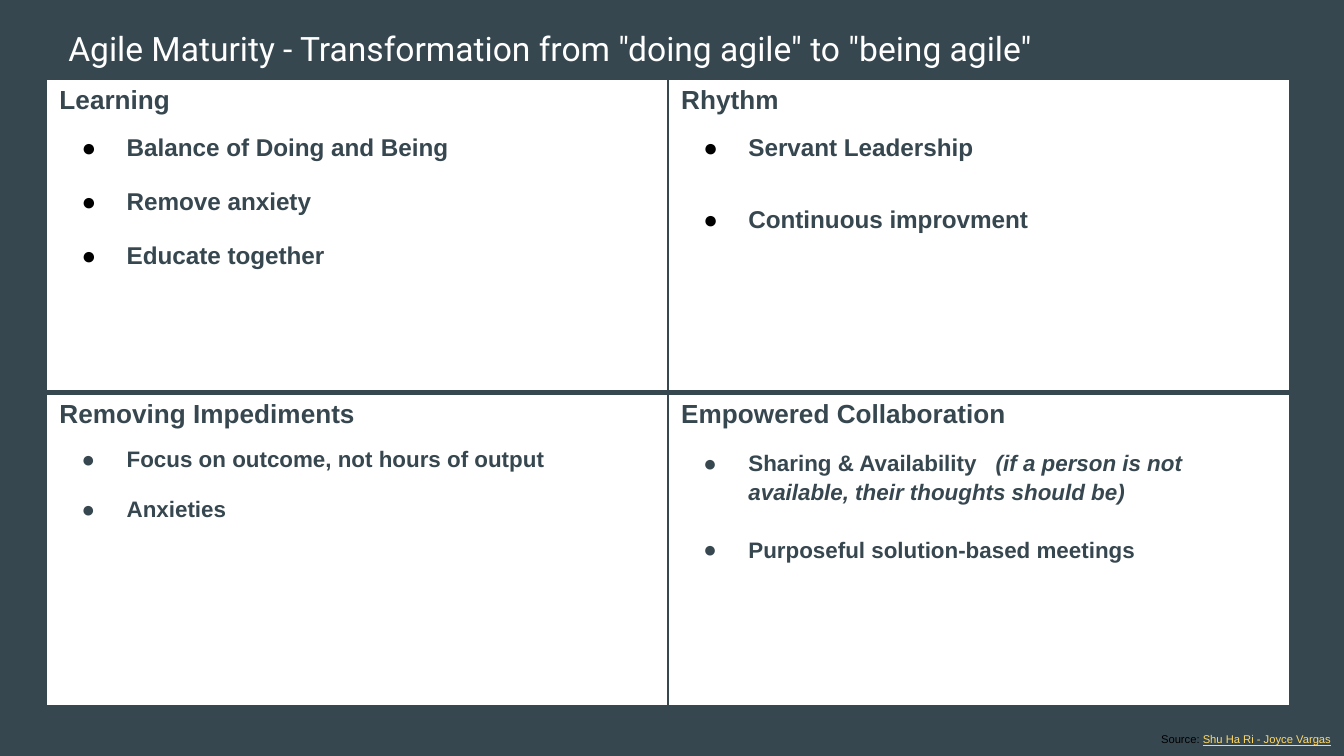
import pptx
import pptx.util
import pptx.dml.color
import pptx.enum.text
import pptx.oxml
from pptx.util import Cm, Pt

SLATE, WHITE, BLACK, GOLD = "37474F", "FFFFFF", "000000", "FFD966"
NS = 'xmlns:a="http://schemas.openxmlformats.org/drawingml/2006/main"'
ALIGN = pptx.enum.text.PP_ALIGN


def paint(item, color):
    """Give a fill or a font a solid colour."""
    if hasattr(item, "solid"):
        item.solid()
        item.fore_color.rgb = pptx.dml.color.RGBColor.from_string(color)
    else:
        item.color.rgb = pptx.dml.color.RGBColor.from_string(color)


def style(par, size, color, face="Arial", bold=False):
    """Set the font of a whole paragraph."""
    par.font.name, par.font.size, par.font.bold = face, Pt(size), bold
    paint(par.font, color)


deck = pptx.Presentation()
deck.slide_width, deck.slide_height = Cm(25.4), Cm(14.29)
slide = deck.slides.add_slide(deck.slide_layouts[5])
paint(slide.background.fill, SLATE)

# Title
title = slide.shapes.title
title.left, title.top, title.width, title.height = Cm(0.86), Cm(0), Cm(24.28), Cm(1.8)
frame = title.text_frame
frame.text = 'Agile Maturity - Transformation from "doing agile" to "being agile"'
frame.auto_size = pptx.enum.text.MSO_AUTO_SIZE.NONE
frame.vertical_anchor = pptx.enum.text.MSO_ANCHOR.MIDDLE
frame.margin_left = Cm(0.43)
frame.margin_right = frame.margin_top = frame.margin_bottom = Cm(0.25)
par = frame.paragraphs[0]
par.alignment = ALIGN.LEFT
style(par, 18, WHITE, "Roboto")

# Source line
box = slide.shapes.add_textbox(Cm(19.18), Cm(13.72), Cm(6.22), Cm(0.56))
frame = box.text_frame
frame.word_wrap = True
frame.margin_left = frame.margin_right = frame.margin_top = frame.margin_bottom = Cm(0.25)
par = frame.paragraphs[0]
par.alignment = ALIGN.RIGHT
style(par, 6, BLACK)
par.add_run().text = "Source: "
run = par.add_run()
run.text = "Shu Ha Ri - Joyce Vargas"
run.font.underline = True
paint(run.font, GOLD)

# Quadrants: heading, text size, bullet colour, gap between items, line spacing, items
# An item is a list of runs: the first upright, the second italic
quads = [
    ("Learning", 13, BLACK, 14.5, 1,
     [["Balance of Doing and Being"], ["Remove anxiety"], ["Educate together"]]),
    ("Rhythm", 13, BLACK, 24.5, 1,
     [["Servant Leadership"], ["Continuous improvment"]]),
    ("Removing Impediments", 12, SLATE, 13.5, 1,
     [["Focus on outcome, not hours of output"], ["Anxieties"]]),
    ("Empowered Collaboration", 12, SLATE, 15.5, 1.15,
     [["Sharing & Availability",
       "(if a person is not available, their thoughts should be)"],
      ["Purposeful solution-based meetings"]]),
]
table = slide.shapes.add_table(2, 2, Cm(0.87), Cm(1.5), Cm(23.5), Cm(11.84)).table
table.first_row = table.horz_banding = False

for num, (head, size, dot, gap, lines, items) in enumerate(quads):
    row, col = divmod(num, 2)
    cell = table.cell(row, col)
    paint(cell.fill, WHITE)

    # Borders: the rule between the rows is the thick one
    widths = {"L": 1, "R": 1, "T": 3 if row else 1, "B": 1 if row else 3}
    props = cell._tc.get_or_add_tcPr()
    for place, (side, width) in enumerate(widths.items()):
        props.insert(place, pptx.oxml.parse_xml(
            f'<a:ln{side} {NS} w="{Pt(width)}"><a:solidFill>'
            f'<a:srgbClr val="{SLATE}"/></a:solidFill></a:ln{side}>'))

    # Heading
    frame = cell.text_frame
    par = frame.paragraphs[0]
    par.text = head
    style(par, 14, SLATE, bold=True)

    # Bulleted items
    for pos, parts in enumerate(items):
        par = frame.add_paragraph()
        par.space_before = Pt(gap if pos else 10)
        par.line_spacing = lines
        style(par, size, SLATE, bold=True)
        par.add_run().text = parts[0]
        for aside in parts[1:]:
            space = par.add_run()
            space.text = " "
            space.font._element.set("spc", "667")  # a wide space before the aside
            run = par.add_run()
            run.text = aside
            run.font.italic = True
        props = par._p.get_or_add_pPr()
        props.set("marL", str(Cm(1.27)))
        props.set("indent", str(-Cm(0.85)))
        for mark in (f'<a:buClr {NS}><a:srgbClr val="{dot}"/></a:buClr>',
                     f'<a:buFont {NS} typeface="Arial"/>',
                     f'<a:buChar {NS} char="●"/>'):
            props.insert_element_before(pptx.oxml.parse_xml(mark), "a:tabLst", "a:defRPr")

# Every paragraph's font also goes to its runs, as some viewers skip paragraph defaults
frames = [shape.text_frame for shape in slide.shapes if shape.has_text_frame]
frames += [cell.text_frame for cell in table.iter_cells()]
for frame in frames:
    for par in frame.paragraphs:
        for run in par.runs:
            run.font.name, run.font.size = par.font.name, par.font.size
            run.font.bold = par.font.bold
            if run.font.color.type is None:
                paint(run.font, str(par.font.color.rgb))

deck.save("out.pptx")
